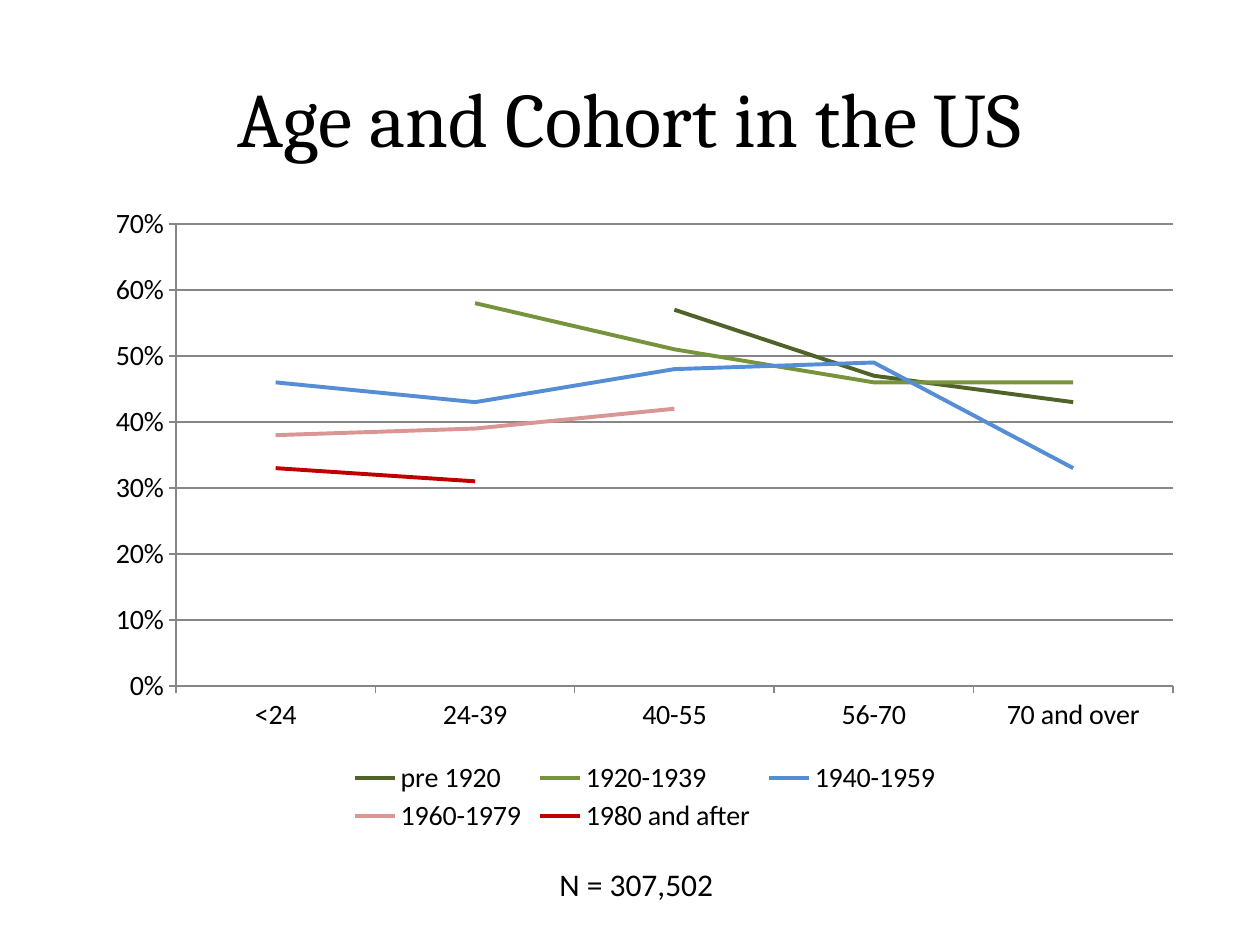
from pptx import Presentation
from pptx.chart.data import CategoryChartData
from pptx.dml.color import RGBColor
from pptx.enum.chart import XL_CHART_TYPE, XL_LEGEND_POSITION, XL_MARKER_STYLE, XL_TICK_MARK
from pptx.enum.text import MSO_ANCHOR, MSO_AUTO_SIZE, PP_ALIGN
from pptx.oxml import parse_xml
from pptx.util import Pt

LINE = XL_CHART_TYPE.LINE
BOTTOM = XL_LEGEND_POSITION.BOTTOM
NO_MARK = XL_MARKER_STYLE.NONE
OUT = XL_TICK_MARK.OUTSIDE
MIDDLE = MSO_ANCHOR.MIDDLE
TOP = MSO_ANCHOR.TOP
FIT = MSO_AUTO_SIZE.SHAPE_TO_FIT_TEXT
NO_FIT = MSO_AUTO_SIZE.NONE
CENTER = PP_ALIGN.CENTER
LEFT = PP_ALIGN.LEFT
SCALE = 914400 / 126
CHART_NS = "http://schemas.openxmlformats.org/drawingml/2006/chart"

AGES = ["<24", "24-39", "40-55", "56-70", "70 and over"]
COHORTS = [
    ("pre 1920", "4F6228", [None, None, 0.57, 0.47, 0.43]),
    ("1920-1939", "77933C", [None, 0.58, 0.51, 0.46, 0.46]),
    ("1940-1959", "558ED5", [0.46, 0.43, 0.48, 0.49, 0.33]),
    ("1960-1979", "D99694", [0.38, 0.39, 0.42, None, None]),
    ("1980 and after", "C00000", [0.33, 0.31, None, None, None]),
]


def px(*nums):
    return [round(num * SCALE) for num in nums]


def color(code):
    return RGBColor.from_string(code)


def write(frame, text, size=18, font="Calibri", ink="000000", align=LEFT,
          anchor=TOP, wrap=True, fit=NO_FIT):
    frame.word_wrap = wrap
    frame.auto_size = fit
    frame.vertical_anchor = anchor
    para = frame.paragraphs[0]
    para.alignment = align
    run = para.add_run()
    run.text = text
    run.font.size = Pt(size)
    run.font.name = font
    run.font.color.rgb = color(ink)


def arrange(node, index, box, frame, inner=False):
    for old in node.findall(f"{{{CHART_NS}}}layout"):
        node.remove(old)
    left, top, width, height = box
    parts = {
        "x": (left - frame[0]) / frame[2],
        "y": (top - frame[1]) / frame[3],
        "w": width / frame[2],
        "h": height / frame[3],
    }
    target = '<c:layoutTarget val="inner"/>' if inner else ""
    modes = '<c:xMode val="edge"/><c:yMode val="edge"/>'
    sizes = "".join(f'<c:{key} val="{val:.4f}"/>' for key, val in parts.items())
    node.insert(index, parse_xml(
        f'<c:layout xmlns:c="{CHART_NS}"><c:manualLayout>'
        f"{target}{modes}{sizes}</c:manualLayout></c:layout>"))


class Deck:
    font = "Calibri"
    head = "Cambria"
    ink = "000000"
    rule = "868686"

    def __init__(self, width, height):
        self.deck = Presentation()
        self.deck.slide_width, self.deck.slide_height = px(width, height)
        self.slide = self.deck.slides.add_slide(self.deck.slide_layouts[5])

    def title(self, text, box):
        shape = self.slide.shapes.title
        shape.left, shape.top, shape.width, shape.height = px(*box)
        write(shape.text_frame, text, size=44, font=self.head, ink=self.ink,
              align=CENTER, anchor=MIDDLE)

    def label(self, text, box):
        shape = self.slide.shapes.add_textbox(*px(*box))
        write(shape.text_frame, text, font=self.font, ink=self.ink,
              wrap=False, fit=FIT)

    def stroke(self, line, code, width):
        line.color.rgb = color(code)
        line.width = Pt(width)

    def chart(self, cats, rows, box, plot, key):
        data = CategoryChartData(number_format="0%")
        data.categories = cats
        for name, _, vals in rows:
            data.add_series(name, vals)
        chart = self.slide.shapes.add_chart(LINE, *px(*box), data).chart
        chart.has_title = False
        chart.font.size = Pt(16)
        chart.font.name = self.font
        chart.font.color.rgb = color(self.ink)
        for series, (_, code, _) in zip(chart.plots[0].series, rows):
            series.smooth = False
            series.marker.style = NO_MARK
            self.stroke(series.format.line, code, 2.25)
        chart.plots[0].vary_by_categories = False
        for axis in (chart.category_axis, chart.value_axis):
            axis.major_tick_mark = OUT
            self.stroke(axis.format.line, self.rule, 0.75)
        scale = chart.value_axis
        scale.minimum_scale, scale.maximum_scale, scale.major_unit = 0, 0.7, 0.1
        scale.has_major_gridlines = True
        self.stroke(scale.major_gridlines.format.line, self.rule, 0.75)
        scale.tick_labels.number_format = "0%"
        scale.tick_labels.number_format_is_linked = False
        chart.has_legend = True
        chart.legend.position = BOTTOM
        chart.legend.include_in_layout = False
        area = chart.element.find(f".//{{{CHART_NS}}}plotArea")
        legend = chart.element.find(f".//{{{CHART_NS}}}legend")
        arrange(area, 0, plot, box, inner=True)
        arrange(legend, 1, key, box)

    def save(self):
        self.deck.save("out.pptx")


def main():
    deck = Deck(1260, 945)
    deck.title("Age and Cohort in the US", (63, 38, 1134, 157))
    deck.chart(AGES, COHORTS, box=(94, 195, 1102, 645),
               plot=(176, 224, 997, 462), key=(345, 757, 600, 80))
    deck.label("N = 307,502", (547, 859, 181, 50))
    deck.save()


if __name__ == "__main__":
    main()
